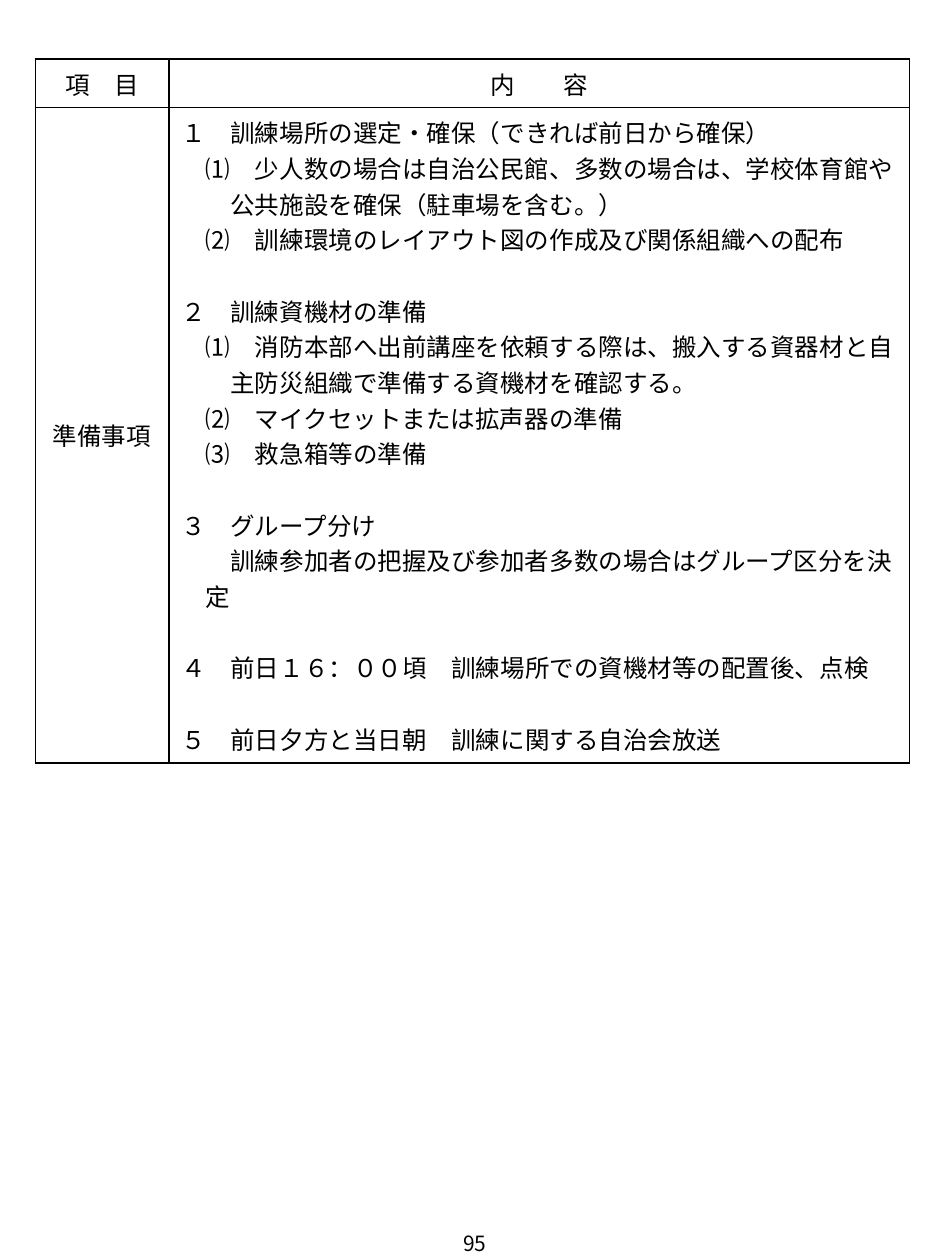
from lxml import etree
from pptx import Presentation
from pptx.dml.color import RGBColor
from pptx.enum import text
from pptx.oxml import ns
from pptx.util import Inches, Pt

COLORS = {"ink": "000000", "paper": "FFFFFF"}
FONT = "Noto Sans CJK JP"
EM = 14
LINE = 20.3
CENTER = text.PP_ALIGN.CENTER
MIDDLE = text.MSO_ANCHOR.MIDDLE

prs = Presentation()
prs.slide_width, prs.slide_height = Inches(7.5), Inches(10)
slide = prs.slides.add_slide(prs.slide_layouts[6])


def write(paragraph, wording, size=EM):
    run = paragraph.add_run()
    run.text = wording
    run.font.size = Pt(size)
    run.font.name = FONT
    run.font.color.rgb = RGBColor.from_string(COLORS["ink"])
    etree.SubElement(run.font._element, ns.qn("a:ea"), typeface=FONT)


def draw_borders(cell):
    properties = cell._tc.get_or_add_tcPr()
    for side in ("lnL", "lnR", "lnT", "lnB"):
        line = etree.SubElement(properties, ns.qn("a:" + side), w=str(Pt(1)))
        fill = etree.SubElement(line, ns.qn("a:solidFill"))
        etree.SubElement(fill, ns.qn("a:srgbClr"), val=COLORS["ink"])


columns = [1.06, 5.88]
rows = [0.38, 5.2]
schedule = slide.shapes.add_table(
    len(rows), len(columns), Inches(0.28), Inches(0.47),
    Inches(sum(columns)), Inches(sum(rows))).table
for column, width in zip(schedule.columns, columns):
    column.width = Inches(width)
for row, height in zip(schedule.rows, rows):
    row.height = Inches(height)
for cell in schedule.iter_cells():
    draw_borders(cell)
    cell.fill.solid()
    cell.fill.fore_color.rgb = RGBColor.from_string(COLORS["paper"])
    cell.vertical_anchor = MIDDLE

labels = {(0, 0): "項　目", (0, 1): "内　　容", (1, 0): "準備事項"}
for position, label in labels.items():
    heading = schedule.cell(*position).text_frame.paragraphs[0]
    heading.alignment = CENTER
    write(heading, label)

preparations = [
    ("１　訓練場所の選定・確保（できれば前日から確保）", [
        "⑴　少人数の場合は自治公民館、多数の場合は、学校体育館や公共施設を確保（駐車場を含む。）",
        "⑵　訓練環境のレイアウト図の作成及び関係組織への配布"]),
    ("２　訓練資機材の準備", [
        "⑴　消防本部へ出前講座を依頼する際は、搬入する資器材と自主防災組織で準備する資機材を確認する。",
        "⑵　マイクセットまたは拡声器の準備",
        "⑶　救急箱等の準備"]),
    ("３　グループ分け", [
        "訓練参加者の把握及び参加者多数の場合はグループ区分を決定"]),
    ("４　前日１６：００頃　訓練場所での資機材等の配置後、点検", []),
    ("５　前日夕方と当日朝　訓練に関する自治会放送", []),
]
contents = schedule.cell(1, 1).text_frame
for number, (topic, details) in enumerate(preparations):
    item = contents.add_paragraph() if number else contents.paragraphs[0]
    item.space_before = Pt(LINE if number else 0)
    write(item, topic)
    for detail in details:
        step = contents.add_paragraph()
        numbered = detail[0] in "⑴⑵⑶"
        indents = step._p.get_or_add_pPr()
        indents.set("marL", str(Pt(EM * (2 if numbered else 1))))
        indents.set("indent", str(Pt(-EM if numbered else EM)))
        write(step, detail)

footer = slide.shapes.add_textbox(
    Inches(3.45), Inches(9.74), Inches(0.64), Inches(0.26)).text_frame
footer.word_wrap = True
footer.vertical_anchor = MIDDLE
footer.margin_top = footer.margin_bottom = 0
page_number = footer.paragraphs[0]
page_number.alignment = CENTER
write(page_number, "95", 12)

prs.save("out.pptx")
